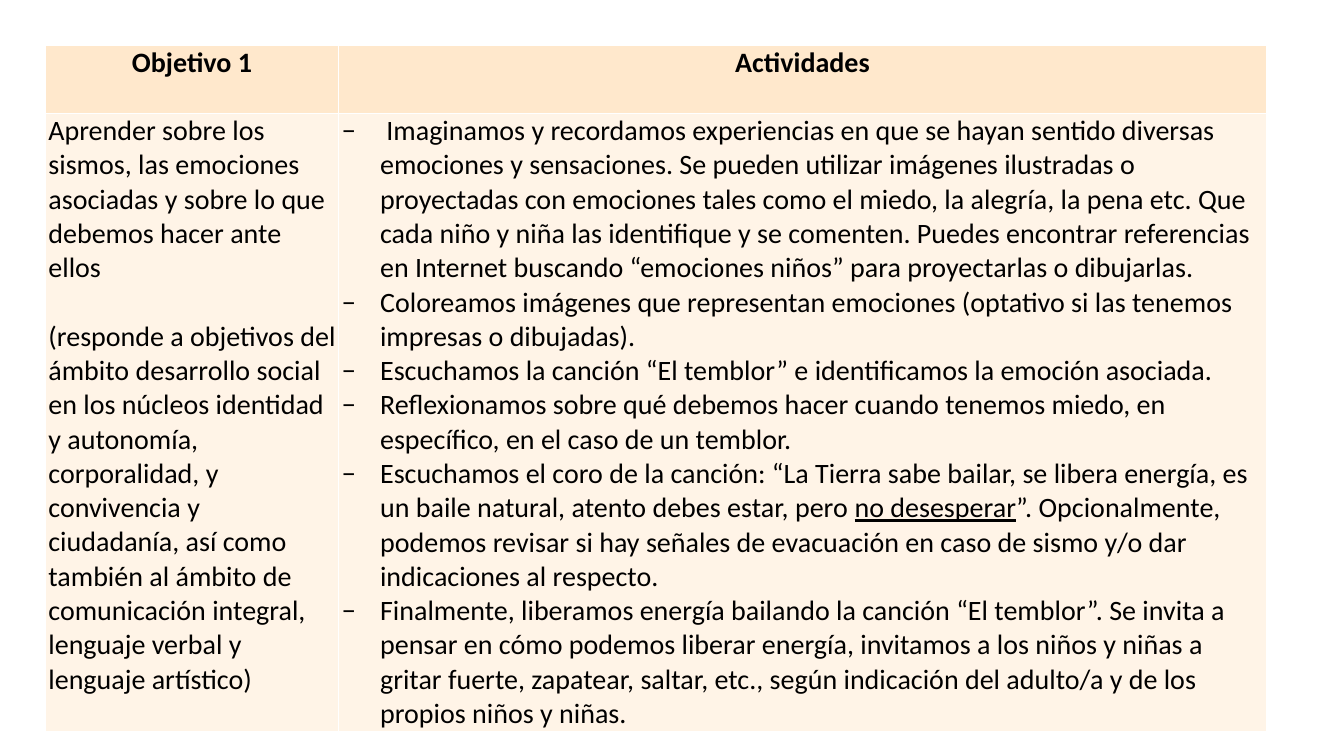
from dataclasses import dataclass

from lxml.etree import SubElement
from pptx import Presentation
from pptx.dml.color import RGBColor
from pptx.enum.text import PP_ALIGN
from pptx.oxml.ns import qn
from pptx.util import Inches, Pt


@dataclass(frozen=True)
class Theme:
    font: str = "Calibri"
    size: float = 20
    line: float = 24.4
    ink: str = "000000"
    head: str = "FFE8CC"
    body: str = "FFF4E7"
    edge: str = "FFFFFF"


THEME = Theme()
WIDTHS = (2.91, 9.2)
HEIGHTS = (0.68, 6.12)
INDENT = 0.38
HEADS = ("Objetivo 1", "Actividades")
GOALS = (
    "Aprender sobre los sismos, las emociones asociadas y sobre lo que "
    "debemos hacer ante ellos",
    "(responde a objetivos del ámbito desarrollo social en los núcleos "
    "identidad y autonomía, corporalidad, y convivencia y ciudadanía, así "
    "como también al ámbito de comunicación integral, lenguaje verbal y "
    "lenguaje artístico)",
)
TASKS = (
    " Imaginamos y recordamos experiencias en que se hayan sentido diversas "
    "emociones y sensaciones. Se pueden utilizar imágenes ilustradas o "
    "proyectadas con emociones tales como el miedo, la alegría, la pena etc. "
    "Que cada niño y niña las identifique y se comenten. Puedes encontrar "
    "referencias en Internet buscando “emociones niños” para proyectarlas "
    "o dibujarlas.",
    "Coloreamos imágenes que representan emociones (optativo si las tenemos "
    "impresas o dibujadas).",
    "Escuchamos la canción “El temblor” e identificamos la emoción asociada.",
    "Reflexionamos sobre qué debemos hacer cuando tenemos miedo, en "
    "específico, en el caso de un temblor.",
    "Escuchamos el coro de la canción: “La Tierra sabe bailar, se libera "
    "energía, es un baile natural, atento debes estar, pero |no desesperar|”. "
    "Opcionalmente, podemos revisar si hay señales de evacuación en caso de "
    "sismo y/o dar indicaciones al respecto.",
    "Finalmente, liberamos energía bailando la canción “El temblor”. Se "
    "invita a pensar en cómo podemos liberar energía, invitamos a los niños "
    "y niñas a gritar fuerte, zapatear, saltar, etc., según indicación del "
    "adulto/a y de los propios niños y niñas.",
)


def assign(item, values):
    for name, value in values.items():
        setattr(item, name, value)


def add_edges(cell):
    props = cell._tc.get_or_add_tcPr()
    for side in ("lnL", "lnR", "lnT", "lnB"):
        line = SubElement(props, qn(f"a:{side}"), w=str(Pt(1)))
        fill = SubElement(line, qn("a:solidFill"))
        SubElement(fill, qn("a:srgbClr"), val=THEME.edge)


def add_dash(para):
    props = para._p.get_or_add_pPr()
    props.set("marL", str(Inches(INDENT)))
    props.set("indent", str(-Inches(INDENT)))
    SubElement(props, qn("a:buFont"), typeface=THEME.font)
    SubElement(props, qn("a:buChar"), char="−")


def fill_cell(cell, texts, shade, bold=False, align=PP_ALIGN.LEFT, gap=0, dash=False):
    assign(cell, {
        "margin_left": Inches(0.03),
        "margin_right": Inches(0.03),
        "margin_top": 0,
        "margin_bottom": 0,
    })
    add_edges(cell)
    cell.fill.solid()
    cell.fill.fore_color.rgb = RGBColor.from_string(shade)
    frame = cell.text_frame
    for row, text in enumerate(texts):
        para = frame.add_paragraph() if row else frame.paragraphs[0]
        assign(para, {"alignment": align, "space_before": Pt(gap if row else 0)})
        if dash:
            add_dash(para)
        for spot, part in enumerate(text.split("|")):
            run = para.add_run()
            run.text = part
            assign(run.font, {
                "name": THEME.font,
                "size": Pt(THEME.size),
                "bold": bold,
                "underline": spot % 2 == 1,
            })
            run.font.color.rgb = RGBColor.from_string(THEME.ink)


def add_grid(slide):
    frame = slide.shapes.add_table(
        len(HEIGHTS), len(WIDTHS), Inches(0.45), Inches(0.45),
        Inches(sum(WIDTHS)), Inches(sum(HEIGHTS)),
    )
    grid = frame.table
    assign(grid, {"first_row": False, "horz_banding": False})
    for col, width in zip(grid.columns, WIDTHS):
        col.width = Inches(width)
    for row, height in zip(grid.rows, HEIGHTS):
        row.height = Inches(height)
    return grid


def main():
    deck = Presentation()
    assign(deck, {"slide_width": Inches(13.33), "slide_height": Inches(7.5)})
    slide = deck.slides.add_slide(deck.slide_layouts.get_by_name("Blank"))
    grid = add_grid(slide)
    for col, head in enumerate(HEADS):
        fill_cell(grid.cell(0, col), [head], THEME.head, bold=True, align=PP_ALIGN.CENTER)
    fill_cell(grid.cell(1, 0), GOALS, THEME.body, gap=THEME.line)
    fill_cell(grid.cell(1, 1), TASKS, THEME.body, dash=True)
    deck.save("out.pptx")


if __name__ == "__main__":
    main()
